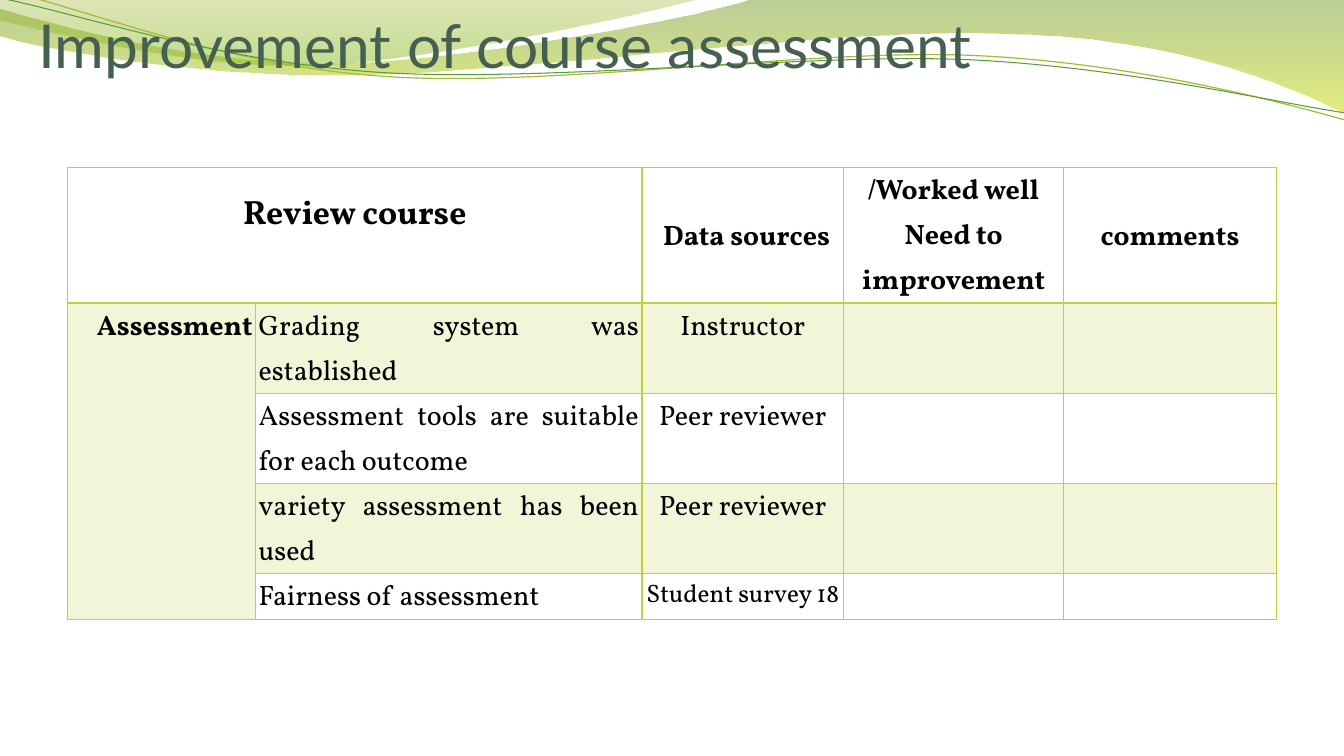
import math
from dataclasses import dataclass

from lxml import etree
from pptx import Presentation
from pptx.dml.color import RGBColor
from pptx.enum import text
from pptx.oxml import ns
from pptx.util import Pt


@dataclass(frozen=True)
class Theme:
    title_font: str = "Lato"
    body_font: str = "Vollkorn"
    title_color: str = "455F51"
    body_color: str = "000000"
    accent: str = "C0CF3A"
    olive_line: str = "A9B733"
    green_line: str = "549E39"
    title_size: float = 43.2
    heading_size: float = 24
    body_size: float = 20
    small_size: float = 18
    band_opacity: int = 20


THEME = Theme()
CENTER, JUSTIFY = text.PP_ALIGN.CENTER, text.PP_ALIGN.JUSTIFY
TOP, MIDDLE = text.MSO_ANCHOR.TOP, text.MSO_ANCHOR.MIDDLE

# Waves in points: a start, then pairs (straight) or sixes (Bezier curve)
BROAD_WAVE = [
    (960.5, 0), (537.8, -0.7),
    (503.3, 12.2, 323.3, 45.4, 232.6, 45.4), (141.1, 45.4, 40.3, 18.7, 0, 6.5),
    (-0.7, 25.9),
    (16.6, 31.7, 125.3, 54.7, 244.1, 54), (363.6, 54, 594, 20.2, 713.5, 24.5),
    (837.4, 25.9, 916.6, 59.8, 961.2, 81.4)]
LEFT_WAVE = [
    (500.4, -0.7), (471.6, 7.9, 305.3, 44.6, 222.5, 46.8),
    (139, 49.7, 37.4, 23, 0, 15.1), (0, 0)]
OLIVE_CURVE = [
    (960.5, 85.7), (914.4, 72.7, 808.6, 44.6, 694.8, 39.6),
    (580.3, 34.6, 391.7, 62.6, 276.5, 54.7), (161.3, 47.5, 59, 5.8, 2.2, -7.2)]
GREEN_CURVE = [
    (960.5, 80.6), (915.1, 74.2, 802.8, 47.5, 688.3, 42.5),
    (573.8, 38.2, 387.4, 59, 272.2, 51.8), (157.7, 44.6, 56.9, 10.1, 0, -1.4)]
CURVE_TILT = 2.7

COLUMN_WIDTHS = [134.4, 276, 144, 157.2, 152]
ROW_HEIGHTS = [97, 64.4, 64.4, 64.4, 32.8]
CRITERIA = [
    ("Grading system was established ", "Instructor", THEME.body_size),
    ("Assessment tools are suitable for each outcome ", "Peer reviewer", THEME.body_size),
    ("variety assessment has been used ", "Peer reviewer", THEME.body_size),
    ("Fairness of assessment", "Student survey 18 ", THEME.small_size)]


def rgb(color):
    return RGBColor.from_string(color)


def set_opacity(parent, percents):
    """Give each colour under parent its opacity, in order."""
    for color, percent in zip(list(parent.iter(ns.qn("a:srgbClr"))), percents):
        etree.SubElement(color, ns.qn("a:alpha"), val=str(percent * 1000))


def write(paragraph, content, *, size=THEME.body_size, font=THEME.body_font,
          color=THEME.body_color, bold=False, align=None, rtl=False, spacing=None):
    paragraph.alignment = align
    paragraph.line_spacing = spacing
    if rtl:
        paragraph._p.get_or_add_pPr().set("rtl", "1")
    run = paragraph.add_run()
    run.text = content
    run.font.size, run.font.name, run.font.bold = Pt(size), font, bold
    run.font.color.rgb = rgb(color)


# Waves

def rotate(point, center, degrees):
    angle = math.radians(degrees)
    x, y = point[0] - center[0], point[1] - center[1]
    return (center[0] + x * math.cos(angle) - y * math.sin(angle),
            center[1] + x * math.sin(angle) + y * math.cos(angle))


def add_outline(slide, segments, close, tilt=0):
    """Draw the segments; each six becomes one Bezier curve."""
    points = [pair for segment in segments
              for pair in zip(segment[::2], segment[1::2])]
    center = [(min(axis) + max(axis)) / 2 for axis in zip(*points)]
    points = [tuple(round(value * 100) for value in rotate(point, center, -tilt))
              for point in points]
    builder = slide.shapes.build_freeform(*points[0], scale=Pt(1) / 100)
    builder.add_line_segments(points[1:], close=close)
    shape = builder.convert_to_shape()
    shape.rotation = tilt
    shape.shadow.inherit = False
    lines = iter(list(shape._element.iter(ns.qn("a:lnTo"))))
    for segment in segments[1:]:
        line = next(lines)
        if len(segment) == 6:
            line_group = [line, next(lines), next(lines)]
            curve = etree.Element(ns.qn("a:cubicBezTo"))
            line.addprevious(curve)
            for part in line_group:
                curve.append(part[0])
                part.getparent().remove(part)
    return shape


def add_wave(slide, segments, stops):
    """Fill a wave from top to bottom; a stop is position, colour, opacity."""
    shape = add_outline(slide, segments, close=True)
    shape.line.fill.background()
    shape.fill.gradient()
    shape.fill.gradient_angle = 270
    for stop, (position, color, _) in zip(shape.fill.gradient_stops, stops):
        stop.position = position
        stop.color.rgb = rgb(color)
    set_opacity(shape._element.spPr, [opacity for _, _, opacity in stops])


def add_curve(slide, segments, color, width):
    shape = add_outline(slide, segments, close=False, tilt=CURVE_TILT)
    shape.fill.background()
    shape.line.color.rgb = rgb(color)
    shape.line.width = Pt(width)


# Title and table

def add_title(slide, content):
    frame = slide.shapes.add_textbox(Pt(27.4), Pt(0), Pt(812), Pt(57.6)).text_frame
    frame.word_wrap = True
    frame.vertical_anchor = text.MSO_ANCHOR.BOTTOM
    frame.margin_left = frame.margin_right = frame.margin_bottom = 0
    frame.margin_top = Pt(3.6)
    write(frame.paragraphs[0], content, size=THEME.title_size,
          font=THEME.title_font, color=THEME.title_color)


def style_cell(cell, banded, bottom_width):
    if banded:
        cell.fill.solid()
        cell.fill.fore_color.rgb = rgb(THEME.accent)
    else:
        cell.fill.background()
    properties = cell._tc.get_or_add_tcPr()
    set_opacity(properties, [THEME.band_opacity])
    for index, (side, width) in enumerate(
            [("L", 1), ("R", 1), ("T", 1), ("B", bottom_width)]):
        border = etree.Element(ns.qn("a:ln" + side), w=str(Pt(width)))
        fill = etree.SubElement(border, ns.qn("a:solidFill"))
        etree.SubElement(fill, ns.qn("a:srgbClr"), val=THEME.accent)
        properties.insert(index, border)


def fill_cell(cell, *lines, anchor=TOP, bottom=0, **style):
    cell.margin_left = cell.margin_right = Pt(2.2)
    cell.margin_top, cell.margin_bottom = 0, Pt(bottom)
    cell.vertical_anchor = anchor
    frame = cell.text_frame
    for index, line in enumerate(lines):
        paragraph = frame.add_paragraph() if index else frame.paragraphs[0]
        write(paragraph, line, spacing=1.15, **style)


def add_review_table(slide):
    table = slide.shapes.add_table(
        len(ROW_HEIGHTS), len(COLUMN_WIDTHS), Pt(48.2), Pt(119.5),
        Pt(sum(COLUMN_WIDTHS)), Pt(sum(ROW_HEIGHTS))).table
    table.first_row = table.horz_banding = False
    for column, width in zip(table.columns, COLUMN_WIDTHS):
        column.width = Pt(width)
    for index, (row, height) in enumerate(zip(table.rows, ROW_HEIGHTS)):
        row.height = Pt(height)
        for cell in row.cells:
            style_cell(cell, banded=index % 2 == 1, bottom_width=1 if index else 2)
    table.cell(0, 0).merge(table.cell(0, 1))
    table.cell(1, 0).merge(table.cell(len(CRITERIA), 0))

    # Header row
    header = dict(bold=True, align=CENTER, rtl=True)
    fill_cell(table.cell(0, 0), "Review course", anchor=MIDDLE, bottom=32,
              size=THEME.heading_size, **header)
    fill_cell(table.cell(0, 2), "Data sources ", anchor=MIDDLE, **header)
    fill_cell(table.cell(0, 3), "Worked well/", "Need to improvement", **header)
    fill_cell(table.cell(0, 4), "comments", anchor=MIDDLE, **header)

    # Criteria and their sources
    fill_cell(table.cell(1, 0), "Assessment", bold=True, align=JUSTIFY, rtl=True)
    for row, (criterion, source, size) in enumerate(CRITERIA, start=1):
        fill_cell(table.cell(row, 1), criterion, align=JUSTIFY)
        fill_cell(table.cell(row, 2), source, size=size, align=CENTER, rtl=True)


def main():
    presentation = Presentation()
    presentation.slide_width, presentation.slide_height = Pt(960), Pt(540)
    slide = presentation.slides.add_slide(presentation.slide_layouts[6])
    add_wave(slide, BROAD_WAVE, [(0, "69921C", 45), (1, "CCE10F", 55)])
    add_wave(slide, LEFT_WAVE, [(0, "9BAA1A", 30), (0.8, "81BA16", 45)])
    add_curve(slide, OLIVE_CURVE, THEME.olive_line, 0.85)
    add_curve(slide, GREEN_CURVE, THEME.green_line, 0.75)
    add_title(slide, "Improvement of course assessment")
    add_review_table(slide)
    presentation.save("out.pptx")


if __name__ == "__main__":
    main()
